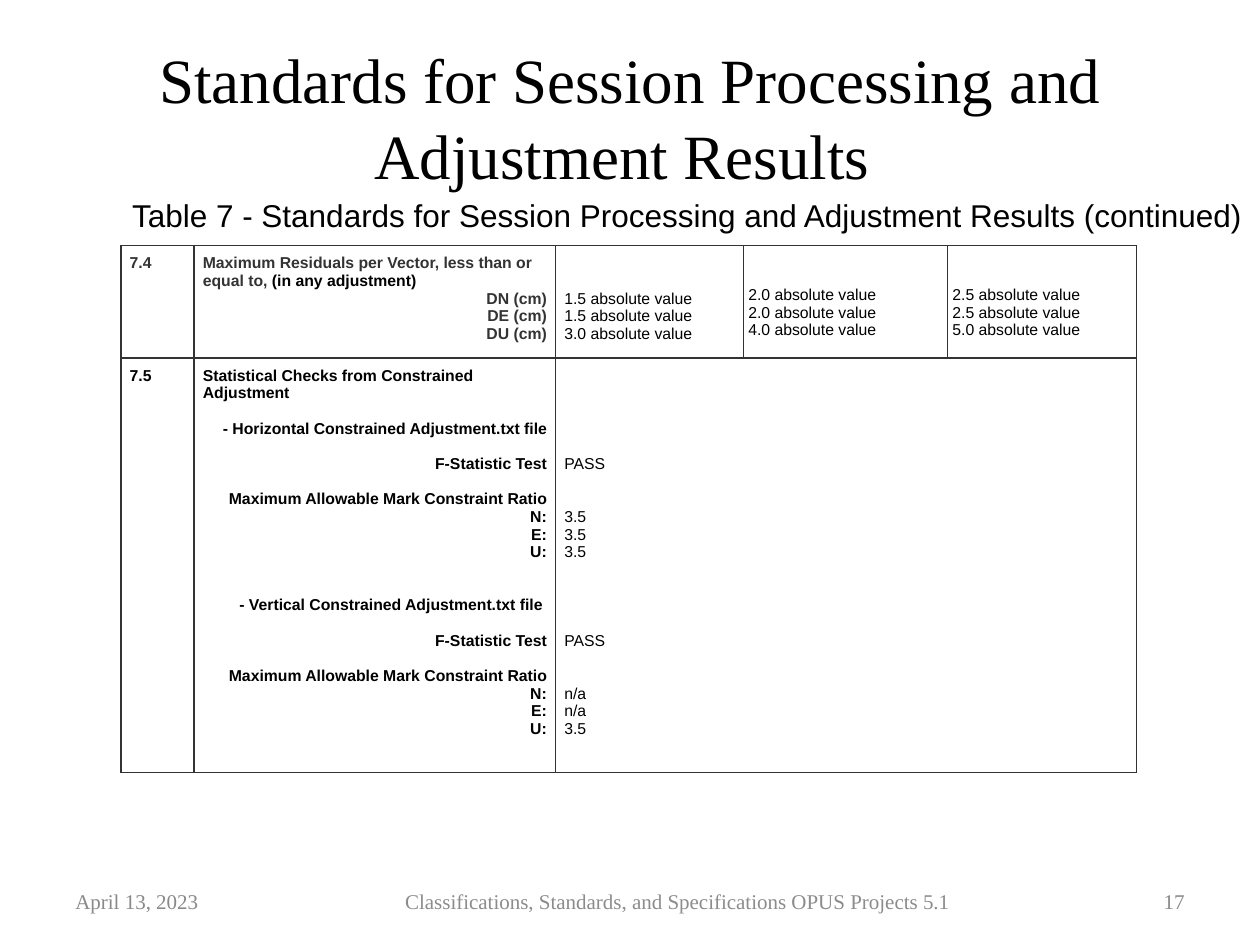
"""Build the slide of session processing and adjustment standards."""
from pptx import Presentation
from pptx.dml.color import RGBColor
from pptx.enum import text
from pptx.oxml import parse_xml
from pptx.oxml.ns import nsdecls
from pptx.util import Inches, Pt

BLACK = RGBColor(0, 0, 0)
WHITE = RGBColor(255, 255, 255)
DARK = RGBColor(0x33, 0x33, 0x33)
GRAY = RGBColor(0x89, 0x89, 0x89)
FOOTER_GRAY = RGBColor(0x8C, 0x8C, 0x8C)
LEFT, CENTER, RIGHT = text.PP_ALIGN.LEFT, text.PP_ALIGN.CENTER, text.PP_ALIGN.RIGHT
SERIF, SANS = "Times New Roman", "Arial"
LINE_POINTS = 10.1

BOXES = [
    ("Standards for Session Processing and Adjustment Results ",
     (0.5, 0.3, 9, 1.25), CENTER, SERIF, 36, BLACK),
    ("April 13, 2023", (0.5, 6.95, 1.4, 0.4), LEFT, SERIF, 12, GRAY),
    ("Classifications, Standards, and Specifications OPUS Projects 5.1",
     (2.31, 6.95, 6.14, 0.4), CENTER, SERIF, 12, FOOTER_GRAY),
    ("17", (8.71, 6.95, 0.79, 0.4), RIGHT, SERIF, 12, GRAY),
    ("Table 7 - Standards for Session Processing and Adjustment Results (continued)",
     (0.95, 1.51, 9.04, 0.4), LEFT, SANS, 18, BLACK),
]

COLUMNS = [0.58, 2.87, 1.49, 1.62, 1.5]
ROWS = [0.89, 3.29]
RATIO = [(1, "F-Statistic Test"), (1, "Maximum Allowable Mark Constraint Ratio"),
         (0, "N:"), (0, "E:"), (0, "U:")]
RESIDUAL_LABEL = "Maximum Residuals per Vector, less than or equal to, "
RESIDUAL_NOTE = "(in any adjustment)\u00a0"
RESIDUALS = [(1.5, 1.5, 3.0), (2.0, 2.0, 4.0), (2.5, 2.5, 5.0)]
RESIDUAL_INSETS = [0.07, 0.04, 0.04]
LABELS_74 = [(0, RESIDUAL_LABEL), (0, "DN (cm)"), (0, "DE (cm)"), (0, "DU (cm)")]
LABELS_75 = [(0, "Statistical Checks from Constrained Adjustment"),
             (1, "- Horizontal Constrained Adjustment.txt file"), *RATIO,
             (2, "- Vertical Constrained Adjustment.txt file\u00a0"), *RATIO]
VALUES_75 = [(5, "PASS"), (2, "3.5"), (0, "3.5"), (0, "3.5"),
             (4, "PASS"), (2, "n/a"), (0, "n/a"), (0, "3.5")]


def style(font, name, size, color, bold=False):
    font.name, font.size, font.bold = name, Pt(size), bold
    font.color.rgb = color


def add_box(page, words, place, align, name, size, color):
    frame = page.shapes.add_textbox(*map(Inches, place)).text_frame
    frame.word_wrap = True
    frame.vertical_anchor = text.MSO_ANCHOR.MIDDLE
    frame.text = words
    para = frame.paragraphs[0]
    para.alignment = align
    style(para.runs[0].font, name, size, color)


def fill_cell(cell, lines, color=BLACK, bold=False, label=False, inset=0.07):
    """Write (blank lines before, words) pairs; labels are right-aligned after the first."""
    cell.margin_left = cell.margin_right = cell.margin_bottom = Inches(inset)
    cell.margin_top = Inches(inset) + Pt(lines[0][0] * LINE_POINTS)
    frame = cell.text_frame
    frame.text = "\n".join(words for _, words in lines)
    for index, (para, (gap, _)) in enumerate(zip(frame.paragraphs, lines)):
        para.alignment = RIGHT if label and index else LEFT
        if index and gap:
            para.space_before = Pt(gap * LINE_POINTS)
        style(para.runs[0].font, SANS, 9, color, bold)


def add_borders(cell, sides):
    properties = cell._tc.get_or_add_tcPr()
    for index, side in enumerate(sides):
        properties.insert(index, parse_xml(
            f'<a:ln{side} {nsdecls("a")} w="12700"><a:solidFill>'
            f'<a:srgbClr val="{DARK}"/></a:solidFill></a:ln{side}>'))


def add_standards(page):
    table = page.shapes.add_table(
        len(ROWS), len(COLUMNS), Inches(0.96), Inches(1.95),
        Inches(sum(COLUMNS)), Inches(sum(ROWS))).table
    table.first_row = table.horz_banding = False
    for column, width in zip(table.columns, COLUMNS):
        column.width = Inches(width)
    for row, height in zip(table.rows, ROWS):
        row.height = Inches(height)
    table.cell(1, 2).merge(table.cell(1, 4))

    fill_cell(table.cell(0, 0), [(0, "7.4")], DARK, True)
    fill_cell(table.cell(0, 1), LABELS_74, DARK, True, True)
    note = table.cell(0, 1).text_frame.paragraphs[0].add_run()
    note.text = RESIDUAL_NOTE
    style(note.font, SANS, 9, BLACK, True)
    for column, (values, inset) in enumerate(zip(RESIDUALS, RESIDUAL_INSETS), 2):
        lines = [(0 if index else 2, f"{value} absolute value")
                 for index, value in enumerate(values)]
        fill_cell(table.cell(0, column), lines, inset=inset)
    fill_cell(table.cell(1, 0), [(0, "7.5")], bold=True)
    fill_cell(table.cell(1, 1), LABELS_75, bold=True, label=True)
    fill_cell(table.cell(1, 2), VALUES_75)

    for cell in table.iter_cells():
        cell.fill.solid()
        cell.fill.fore_color.rgb = WHITE
        add_borders(cell, "TB" if cell.is_spanned else "LRTB")
    add_borders(table.cell(1, 4), "R")


def main():
    deck = Presentation()
    deck.slide_width, deck.slide_height = Inches(10), Inches(7.5)
    page = deck.slides.add_slide(deck.slide_layouts[6])
    for box in BOXES:
        add_box(page, *box)
    add_standards(page)
    deck.save("out.pptx")


if __name__ == "__main__":
    main()
